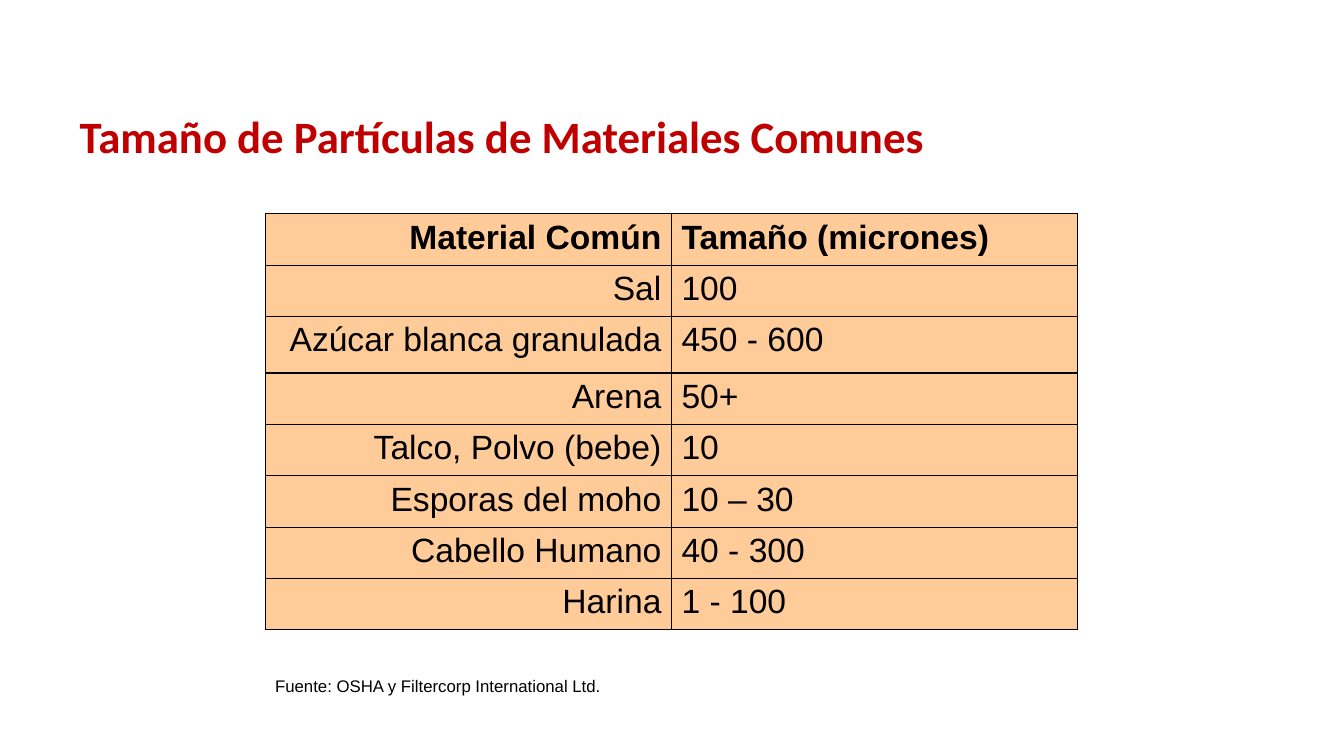
from dataclasses import dataclass

from lxml import etree
from pptx import Presentation
from pptx.dml.color import RGBColor
from pptx.enum.text import MSO_ANCHOR, PP_ALIGN
from pptx.oxml.ns import qn
from pptx.util import Inches, Pt

LEFT, RIGHT = PP_ALIGN.LEFT, PP_ALIGN.RIGHT
TOP, MIDDLE = MSO_ANCHOR.TOP, MSO_ANCHOR.MIDDLE
SLIDE_WIDTH, SLIDE_HEIGHT = Inches(13.33), Inches(7.5)
BORDER_TAGS = ("a:lnL", "a:lnR", "a:lnT", "a:lnB")


@dataclass(frozen=True)
class TextStyle:
    font: str
    size: float
    color: str
    bold: bool = False


@dataclass(frozen=True)
class Theme:
    title: TextStyle = TextStyle("Calibri", 32, "C00000", True)
    header: TextStyle = TextStyle("Arial", 24, "000000", True)
    body: TextStyle = TextStyle("Arial", 24, "000000")
    source: TextStyle = TextStyle("Arial", 12, "000000")
    paper: str = "FFFFFF"
    cell: str = "FFCC99"
    border: str = "000000"
    border_width: float = 1
    hanging_indent: float = 0.38


@dataclass(frozen=True)
class Area:
    """Place on the slide, in inches."""
    left: float
    top: float
    width: float
    height: float

    def emu(self) -> tuple:
        return tuple(map(Inches, (self.left, self.top, self.width, self.height)))


@dataclass(frozen=True)
class Caption:
    text: str
    area: Area
    style: TextStyle
    anchor: MSO_ANCHOR = TOP
    fill: str = ""
    line_spacing: float = 1.0


@dataclass(frozen=True)
class Particle:
    material: str
    microns: str
    height: float = 0.51


THEME = Theme()
TABLE_LEFT, TABLE_TOP, COLUMN_WIDTH = 2.63, 2.12, 4.03

CAPTIONS = (
    Caption("Tamaño de Partículas de Materiales Comunes", Area(0.69, 0.98, 9.25, 0.79),
            THEME.title, MIDDLE, THEME.paper, 0.9),
    Caption("Fuente: OSHA y Filtercorp International Ltd.",
            Area(TABLE_LEFT, 6.65, 3.51, 0.3), THEME.source),
)
PARTICLES = (
    Particle("Material Común", "Tamaño (micrones)"),
    Particle("Sal", "100"),
    Particle("Azúcar blanca granulada", "450 - 600", 0.56),
    Particle("Arena", "50+"),
    Particle("Talco, Polvo (bebe)", "10"),
    Particle("Esporas del moho", "10 – 30"),
    Particle("Cabello Humano", "40 - 300"),
    Particle("Harina", "1 - 100"),
)


def add_run(paragraph, text: str, style: TextStyle) -> None:
    run = paragraph.add_run()
    run.text = text
    run.font.name = style.font
    run.font.size = Pt(style.size)
    run.font.bold = style.bold
    run.font.color.rgb = RGBColor.from_string(style.color)


def add_caption(slide, caption: Caption) -> None:
    box = slide.shapes.add_textbox(*caption.area.emu())
    if caption.fill:
        box.fill.solid()
        box.fill.fore_color.rgb = RGBColor.from_string(caption.fill)
    frame = box.text_frame
    frame.word_wrap = True
    frame.vertical_anchor = caption.anchor
    paragraph = frame.paragraphs[0]
    paragraph.line_spacing = caption.line_spacing
    add_run(paragraph, caption.text, caption.style)


def add_borders(cell) -> None:
    properties = cell._tc.get_or_add_tcPr()
    for tag in BORDER_TAGS:
        line = etree.SubElement(properties, qn(tag), w=str(Pt(THEME.border_width)))
        fill = etree.SubElement(line, qn("a:solidFill"))
        etree.SubElement(fill, qn("a:srgbClr"), val=THEME.border)


def fill_cell(cell, text: str, style: TextStyle, alignment: PP_ALIGN) -> None:
    add_borders(cell)
    cell.fill.solid()
    cell.fill.fore_color.rgb = RGBColor.from_string(THEME.cell)
    paragraph = cell.text_frame.paragraphs[0]
    paragraph.alignment = alignment
    indent = Inches(THEME.hanging_indent)
    properties = paragraph._p.get_or_add_pPr()
    properties.set("marL", str(indent))
    properties.set("indent", str(-indent))
    add_run(paragraph, text, style)


def add_particle_table(slide) -> None:
    area = Area(TABLE_LEFT, TABLE_TOP, 2 * COLUMN_WIDTH,
                sum(particle.height for particle in PARTICLES))
    table = slide.shapes.add_table(len(PARTICLES), 2, *area.emu()).table
    for column in table.columns:
        column.width = Inches(COLUMN_WIDTH)
    for index, particle in enumerate(PARTICLES):
        table.rows[index].height = Inches(particle.height)
        style = THEME.body if index else THEME.header
        fill_cell(table.cell(index, 0), particle.material, style, RIGHT)
        fill_cell(table.cell(index, 1), particle.microns, style, LEFT)


def main() -> None:
    deck = Presentation()
    deck.slide_width, deck.slide_height = SLIDE_WIDTH, SLIDE_HEIGHT
    slide = deck.slides.add_slide(deck.slide_layouts[6])
    for caption in CAPTIONS:
        add_caption(slide, caption)
    add_particle_table(slide)
    deck.save("out.pptx")


if __name__ == "__main__":
    main()
